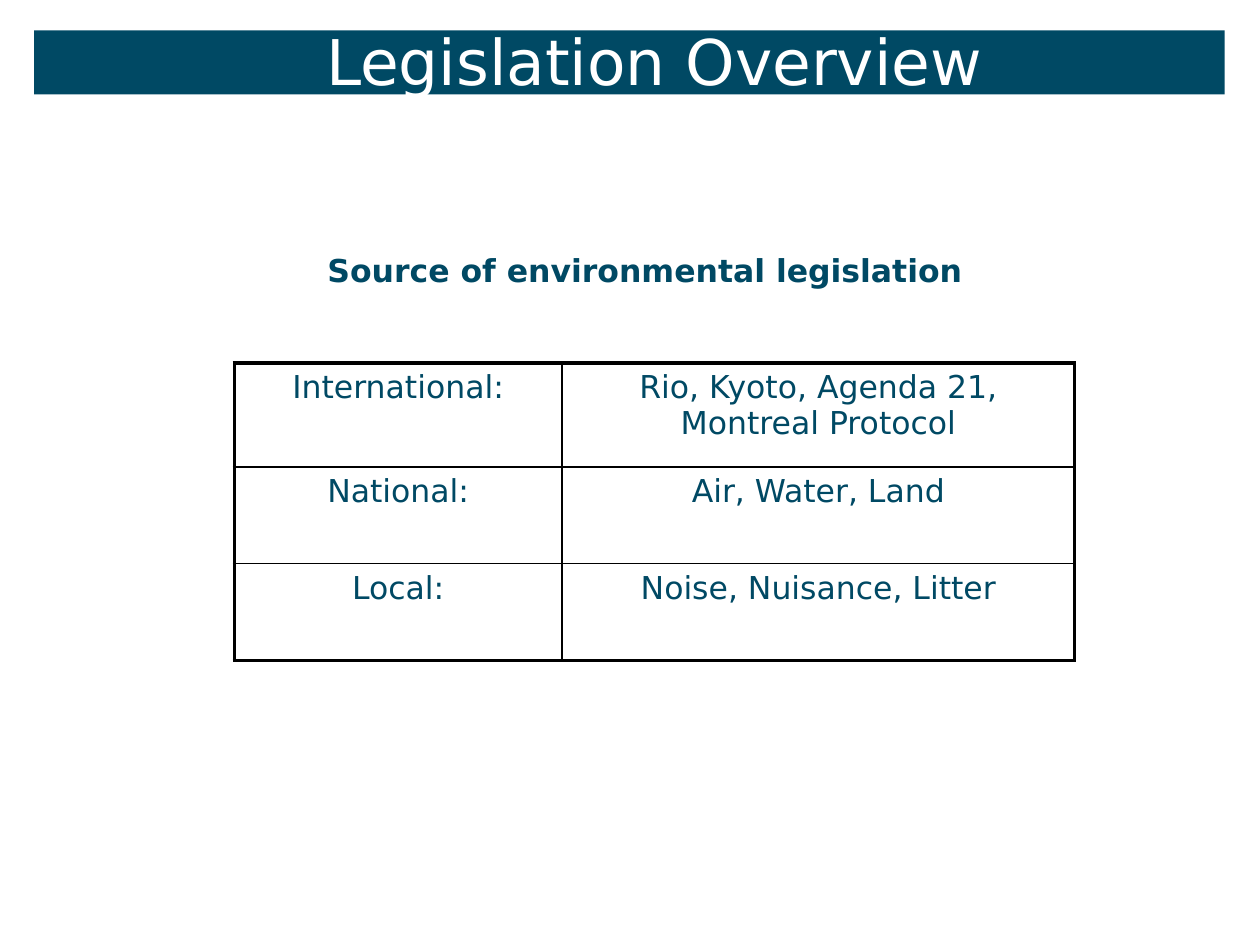
from lxml import etree
from pptx import Presentation
from pptx.dml.color import RGBColor
from pptx.enum.shapes import MSO_SHAPE
from pptx.enum.text import MSO_ANCHOR, PP_ALIGN
from pptx.oxml.ns import qn
from pptx.util import Inches, Pt

RECTANGLE = MSO_SHAPE.RECTANGLE
CENTER, LEFT = PP_ALIGN.CENTER, PP_ALIGN.LEFT
TOP, BOTTOM = MSO_ANCHOR.TOP, MSO_ANCHOR.BOTTOM

FONT = "DejaVu Sans"
COLORS = {"teal": "004964", "white": "FFFFFF", "border": "000000"}
WIDTH, HEIGHT = 10, 7.5
OUTER, INNER = 2.25, 1
SOURCES = [
    ("International:", "Rio, Kyoto, Agenda 21, Montreal Protocol"),
    ("National:", "Air, Water, Land"),
    ("Local:", "Noise, Nuisance, Litter"),
]
COLUMN_SHARES = (0.39, 0.61)
ROW_SHARES = (0.35, 0.325, 0.325)


def rgb(name):
    return RGBColor.from_string(COLORS[name])


def inches(box):
    return [Inches(v) for v in box]


def write(tf, text, size, color, align, bold=False):
    p = tf.paragraphs[0]
    p.alignment = align
    r = p.add_run()
    r.text = text
    r.font.name = FONT
    r.font.size = Pt(size)
    r.font.bold = bold
    r.font.color.rgb = rgb(color)
    return p


def add_text(s, box, anchor, *style, **options):
    tf = s.shapes.add_textbox(*inches(box)).text_frame
    tf.word_wrap = True
    tf.vertical_anchor = anchor
    return write(tf, *style, **options)


def add_title(s, box):
    left, top, width, height = box
    band = s.shapes.add_shape(RECTANGLE, *inches(box))
    band.shadow.inherit = False
    band.fill.solid()
    band.fill.fore_color.rgb = rgb("teal")
    band.line.fill.background()
    text_box = (left + 0.075 * width, top - 0.03, 0.892 * width, 1.2 * height)
    p = add_text(s, text_box, BOTTOM, "Legislation Overview", 36, "white", CENTER)
    p.line_spacing = 0.75


def add_heading(s, box):
    add_text(s, box, TOP, "Source of environmental legislation", 18, "teal", LEFT, bold=True)


def set_borders(cell, widths):
    tc_pr = cell._tc.get_or_add_tcPr()
    for side, width in zip("LRTB", widths):
        line = etree.SubElement(tc_pr, qn(f"a:ln{side}"), w=str(Pt(width)))
        fill = etree.SubElement(line, qn("a:solidFill"))
        etree.SubElement(fill, qn("a:srgbClr"), val=COLORS["border"])


def add_sources_table(s, box):
    rows, cols = len(SOURCES), len(COLUMN_SHARES)
    table = s.shapes.add_table(rows, cols, *inches(box)).table
    table.first_row = table.horz_banding = False
    for column, share in zip(table.columns, COLUMN_SHARES):
        column.width = Inches(box[2] * share)
    for row, share in zip(table.rows, ROW_SHARES):
        row.height = Inches(box[3] * share)
    for i, texts in enumerate(SOURCES):
        for j, text in enumerate(texts):
            cell = table.cell(i, j)
            edges = (j == 0, j == cols - 1, i == 0, i == rows - 1)
            set_borders(cell, [OUTER if edge else INNER for edge in edges])
            cell.fill.background()
            write(cell.text_frame, text, 18, "teal", CENTER)


def main():
    prs = Presentation()
    prs.slide_width, prs.slide_height = Inches(WIDTH), Inches(HEIGHT)
    s = prs.slides.add_slide(prs.slide_layouts[6])
    add_title(s, (0.27, 0.24, 9.45, 0.51))
    add_heading(s, (2.5, 1.94, 5.34, 0.4))
    add_sources_table(s, (1.86, 2.88, 6.67, 2.36))
    prs.save("out.pptx")


if __name__ == "__main__":
    main()
